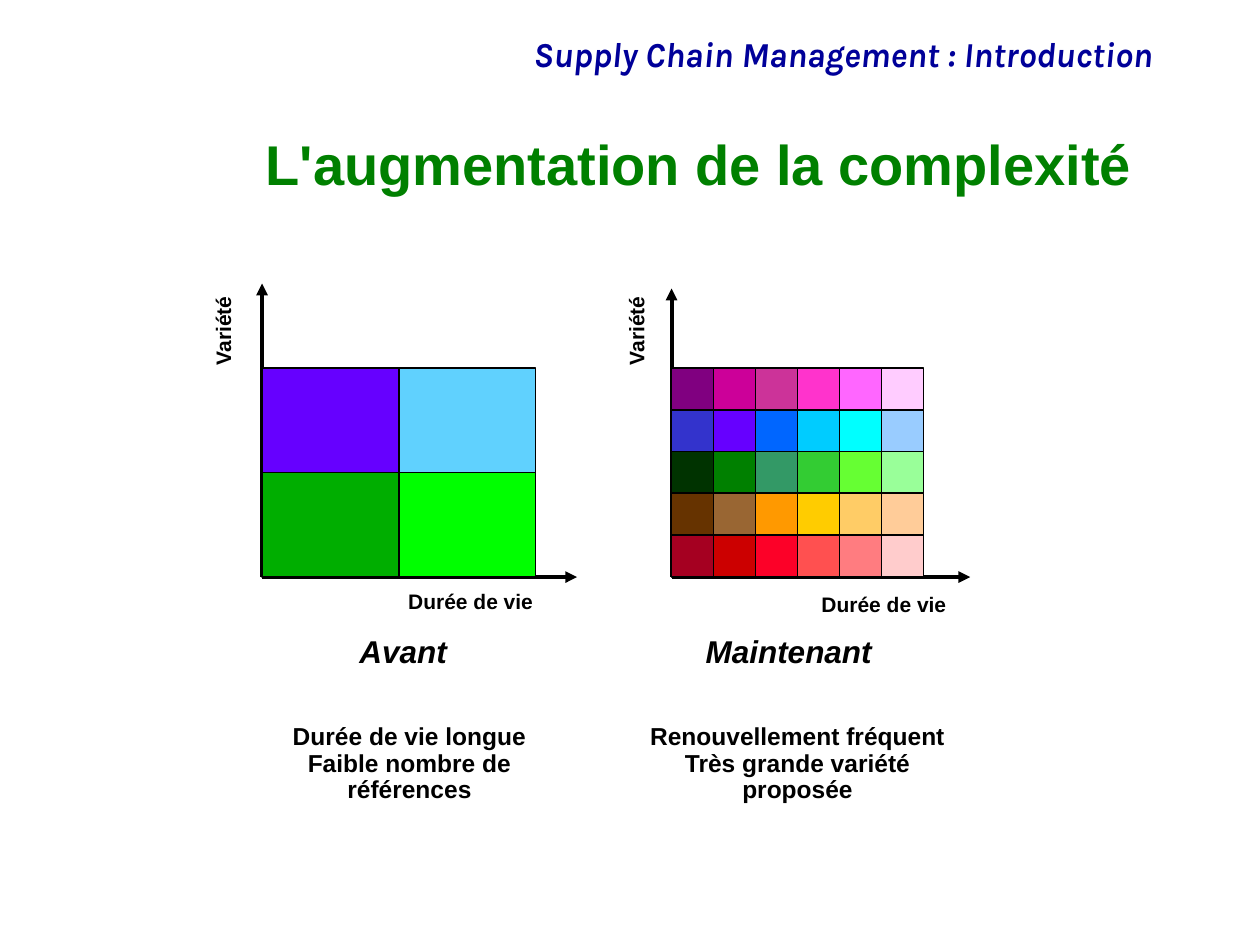
"""Build a slide comparing product variety and life span before and now."""
from lxml import etree
from pptx import Presentation
from pptx import util as u
from pptx.dml.color import RGBColor
from pptx.enum import shapes, text
from pptx.oxml.ns import qn

presentation = Presentation()
presentation.slide_width = u.Inches(10)
presentation.slide_height = u.Inches(7.5)
slide = presentation.slides.add_slide(presentation.slide_layouts[5])


def color(target, value):
    target.rgb = RGBColor.from_string(value)


def write(content, box, shape=None, size=12, ink="000000", font="Arial", italic=False,
          align="CENTER", anchor="TOP", wrap=False, vertical=False):
    box = [u.Inches(value) for value in box]
    if shape is None:
        shape = slide.shapes.add_textbox(*box)
    shape.left, shape.top, shape.width, shape.height = box
    frame = shape.text_frame
    frame.text = content
    frame.word_wrap = wrap
    frame.auto_size = text.MSO_AUTO_SIZE.NONE
    frame.vertical_anchor = text.MSO_ANCHOR[anchor]
    if vertical:
        shape.element.txBody.bodyPr.set("vert", "vert270")
    for paragraph in frame.paragraphs:
        paragraph.alignment = text.PP_ALIGN[align]
        paragraph.line_spacing = 0.9
        run_font = paragraph.runs[0].font
        run_font.name, run_font.size = font, u.Pt(size)
        run_font.bold, run_font.italic = True, italic
        color(run_font.color, ink)


write("Supply Chain Management : Introduction", (1.25, 0.25, 8, 0.4), size=20,
      ink="000099", font="Karla", italic=True, align="RIGHT", wrap=True)
write("L'augmentation de la complexité", (1.17, 1.08, 7.92, 0.5), shape=slide.shapes.title,
      size=32, ink="008000", align="RIGHT", anchor="MIDDLE", wrap=True)

grid_top, grid_bottom = 2.92, 4.58
before = {
    "name": "Avant", "name_box": (2.75, 5, 0.9, 0.37),
    "left": 2.08, "cell_width": 1.085, "axis_top": 2.25, "axis_right": 4.58,
    "variety_left": 1.64, "life_box": (3.14, 4.64, 1.19, 0.28),
    "notes": "Durée de vie longue\nFaible nombre de références", "notes_left": 1.95,
    "colors": ["6600FF 60D1FE", "00AE00 00FF00"],
}
now = {
    "name": "Maintenant", "name_box": (5.5, 5, 1.52, 0.37),
    "left": 5.33, "cell_width": 1 / 3, "axis_top": 2.29, "axis_right": 7.7,
    "variety_left": 4.92, "life_box": (6.42, 4.67, 1.19, 0.28),
    "notes": "Renouvellement fréquent\nTrès grande variété proposée", "notes_left": 5.03,
    "colors": [
        "800080 CC0099 CC3399 FF33CC FF66FF FFCCFF",
        "3333CC 6600FF 0066FF 00CCFF 00FFFF 99CCFF",
        "003300 008000 339966 33CC33 66FF33 99FF99",
        "663300 996633 FF9900 FFCC00 FFCC66 FFCC99",
        "A50021 CC0000 FC0128 FF5050 FF7C80 FFCCCC",
    ],
}

for panel in (before, now):
    left = panel["left"]
    for end_x, end_y in ((left, panel["axis_top"]), (panel["axis_right"], grid_bottom)):
        axis = slide.shapes.add_connector(
            shapes.MSO_CONNECTOR.STRAIGHT, u.Inches(left), u.Inches(grid_bottom),
            u.Inches(end_x), u.Inches(end_y))
        axis.line.width = u.Pt(2.25)
        color(axis.line.color, "000000")
        etree.SubElement(axis.line._get_or_add_ln(), qn("a:tailEnd"), type="triangle")
        etree.SubElement(axis.element.spPr, qn("a:effectLst"))

    cell_width = panel["cell_width"]
    cell_height = (grid_bottom - grid_top) / len(panel["colors"])
    for row, row_colors in enumerate(panel["colors"]):
        for column, fill in enumerate(row_colors.split()):
            cell = slide.shapes.add_shape(
                shapes.MSO_SHAPE.RECTANGLE,
                u.Inches(left + column * cell_width), u.Inches(grid_top + row * cell_height),
                u.Inches(cell_width), u.Inches(cell_height))
            cell.shadow.inherit = False
            cell.fill.solid()
            color(cell.fill.fore_color, fill)
            cell.line.width = u.Pt(1)
            color(cell.line.color, "000000")

    write("Variété", (panel["variety_left"], 2.3, 0.38, 0.65), vertical=True)
    write("Durée de vie", panel["life_box"])
    write(panel["name"], panel["name_box"], size=18, italic=True)
    write(panel["notes"], (panel["notes_left"], 5.7, 2.6, 0.75), size=14, wrap=True)

presentation.save("out.pptx")
